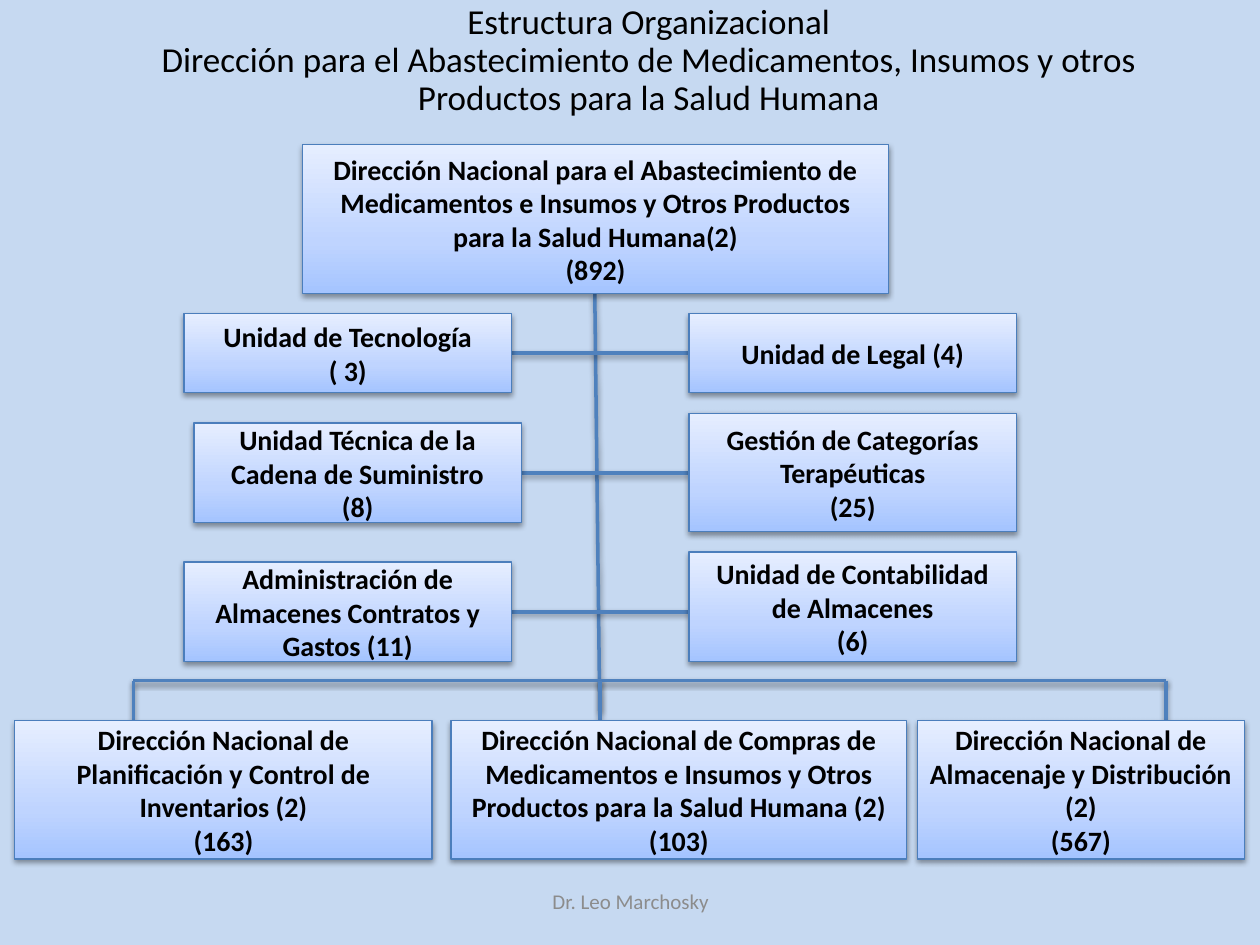
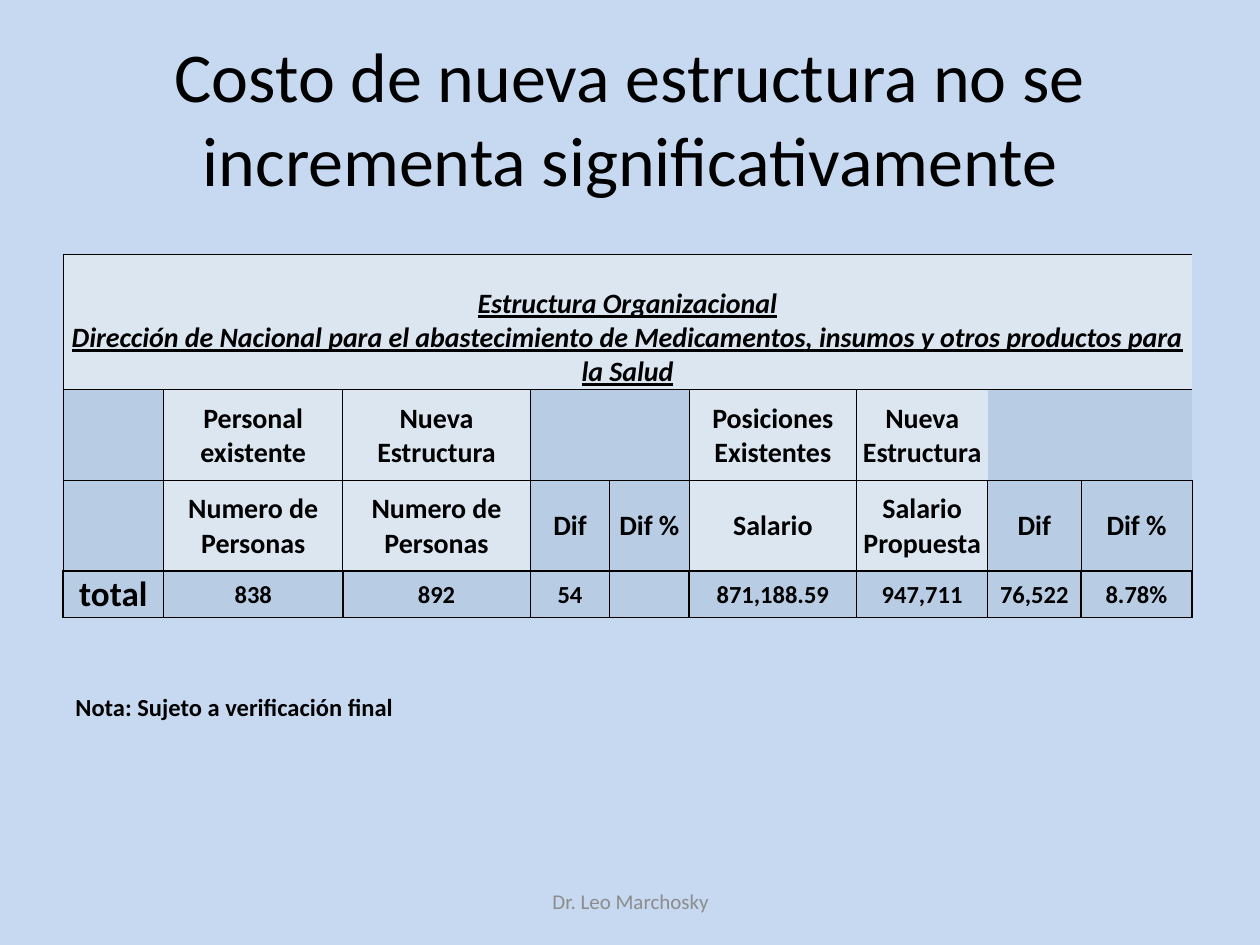
from pptx import Presentation
from pptx.dml.color import RGBColor
from pptx.enum.shapes import MSO_CONNECTOR, MSO_SHAPE
from pptx.enum.text import MSO_ANCHOR, MSO_AUTO_SIZE, PP_ALIGN
from pptx.oxml import parse_xml
from pptx.oxml.ns import nsdecls, qn
from pptx.util import Cm, Pt
from copy import deepcopy

CENTER, LEFT = PP_ALIGN.CENTER, PP_ALIGN.LEFT
MIDDLE, BOTTOM = MSO_ANCHOR.MIDDLE, MSO_ANCHOR.BOTTOM
RECTANGLE, STRAIGHT = MSO_SHAPE.RECTANGLE, MSO_CONNECTOR.STRAIGHT
NO_FIT = MSO_AUTO_SIZE.NONE
TITLE_ONLY = 5

# Shared style
FONT = "Calibri"
BLACK, FOOTER_GREY, BACKGROUND = "000000", "8C8C8C", "C6D9F1"
BOX_LINE, LINK = "4B7EBC", "4F81BD"
BOX_GRADIENT = [(0, "A4C4FF"), (0.35, "BFD4FF"), (1, "E6EEFF")]
CELL_LIGHT, CELL_BLUE = "DCE6F1", "B8CCE4"
FOOTER = "Dr. Leo Marchosky"

# Organization chart: left, top, width, height in cm, then text
UNIT_WIDTH, LEFT_X, RIGHT_X = 6.6, 3.71, 13.89
HEAD = (6.1, 2.92, 11.81, 3,
        "Dirección Nacional para el Abastecimiento de Medicamentos e Insumos "
        "y Otros Productos para la Salud Humana(2)\n(892)")
LEFT_UNITS = [
    (LEFT_X, 6.32, UNIT_WIDTH, 1.6, "Unidad de Tecnología\n( 3)"),
    (3.91, 8.53, UNIT_WIDTH, 2.01,
     "Unidad Técnica de la Cadena de Suministro\n(8)"),
    (LEFT_X, 11.33, UNIT_WIDTH, 2.01,
     "Administración de Almacenes Contratos y Gastos (11)"),
]
RIGHT_UNITS = [
    (RIGHT_X, 6.32, UNIT_WIDTH, 1.6, "Unidad de Legal (4)"),
    (RIGHT_X, 8.33, UNIT_WIDTH, 2.39,
     "Gestión de Categorías Terapéuticas\n(25)"),
    (RIGHT_X, 11.13, UNIT_WIDTH, 2.21,
     "Unidad de Contabilidad de Almacenes\n(6)"),
]
DIVISION_TOP, DIVISION_HEIGHT, CROSSBAR_Y = 14.53, 2.79, 13.72
DROP_XS = [2.69, 12.09, 23.5]
DIVISIONS = [
    (0.3, 8.41, "Dirección Nacional de Planificación y Control de "
                "Inventarios (2)\n(163)"),
    (9.09, 9.19, "Dirección Nacional de Compras de Medicamentos e Insumos y "
                 "Otros Productos para la Salud Humana (2)\n(103)"),
    (18.49, 6.6, "Dirección Nacional de Almacenaje y Distribución (2)\n(567)"),
]

# Cost table
COLUMN_WIDTHS = [0.91, 0.76, 0.36, 3.61, 3.78, 1.6, 1.6, 3.38, 2.64, 1.88, 2.24]
ROW_HEIGHTS = [2.72, 1.83, 1.83, 0.94]
HEADING = ("Estructura Organizacional\nDirección de Nacional para el "
           "abastecimiento de Medicamentos, insumos y otros productos para la Salud")
COST_ROWS = [
    [HEADING] + [""] * 10,
    ["", "", "", "Personal existente", "Nueva Estructura", "", "",
     "Posiciones Existentes", "Nueva Estructura", "", ""],
    ["", "", "", "Numero de Personas", "Numero de Personas", "Dif", "Dif %",
     "Salario", "Salario Propuesta", "Dif", "Dif %"],
    ["total", "", "", "838", "892", "54", "", "871,188.59", "947,711",
     "76,522", "8.78%"],
]
MERGES = [(0, 0, 10), (3, 0, 2)]
LIGHT_COLUMNS = (3, 4, 7, 8)
# Columns of each row that have no line on their right edge
OPEN_RIGHT = [range(11), (0, 1, 5, 8, 9, 10), (0, 1), ()]


def color(value):
    return RGBColor.from_string(value)


def style_text(frame, size, bold=False, ink=BLACK, align=CENTER, emphasis=False):
    for para in frame.paragraphs:
        para.alignment = align
        for span in para.runs:
            font = span.font
            font.name, font.size, font.bold = FONT, Pt(size), bold
            font.italic = font.underline = emphasis
            font.color.rgb = color(ink)


def place(shape, left, top, width, height):
    shape.left, shape.top = Cm(left), Cm(top)
    shape.width, shape.height = Cm(width), Cm(height)


def add_shadow(shape):
    """Append a soft downward shadow after the fill and line."""
    shape._element.spPr.append(parse_xml(
        f'<a:effectLst {nsdecls("a")}><a:outerShdw blurRad="40000" dist="20000" '
        'dir="5400000" rotWithShape="0"><a:srgbClr val="000000">'
        '<a:alpha val="38000"/></a:srgbClr></a:outerShdw></a:effectLst>'))


def add_title(page, text, area, size, spacing=1.0):
    title = page.shapes.title
    place(title, *area)
    frame = title.text_frame
    frame.text = text
    frame.auto_size, frame.vertical_anchor = NO_FIT, MIDDLE
    style_text(frame, size)
    for para in frame.paragraphs:
        para.line_spacing = spacing


def add_label(page, text, area, size, wrap=True, **style):
    box = page.shapes.add_textbox(*map(Cm, area))
    frame = box.text_frame
    frame.text, frame.word_wrap = text, wrap
    frame.vertical_anchor = MIDDLE
    style_text(frame, size, **style)


def add_footer(page):
    add_label(page, FOOTER, (8.69, 17.65, 8.05, 1.02), 12, ink=FOOTER_GREY)


def add_unit(page, left, top, width, height, text):
    box = page.shapes.add_shape(RECTANGLE, *map(Cm, (left, top, width, height)))
    box.fill.gradient()
    box.fill.gradient_angle = 90
    stops = box._element.spPr.find(".//" + qn("a:gsLst"))
    stops.insert(1, deepcopy(stops[0]))
    for stop, (position, shade) in zip(box.fill.gradient_stops, BOX_GRADIENT):
        stop.position = position
        stop.color.rgb = color(shade)
    box.line.color.rgb = color(BOX_LINE)
    box.line.width = Pt(0.75)
    add_shadow(box)
    frame = box.text_frame
    frame.text, frame.word_wrap = text, True
    frame.vertical_anchor = MIDDLE
    style_text(frame, 16, bold=True)


def add_link(page, *ends):
    link = page.shapes.add_connector(STRAIGHT, *map(Cm, ends))
    link.line.color.rgb = color(LINK)
    link.line.width = Pt(2)
    add_shadow(link)


def set_borders(cell, sides, width):
    properties = cell._tc.get_or_add_tcPr()
    for side in "LRTB":
        paint = (f'<a:solidFill><a:srgbClr val="{BLACK}"/></a:solidFill>'
                 if side in sides else "<a:noFill/>")
        properties.append(parse_xml(
            f'<a:ln{side} {nsdecls("a")} w="{Pt(width)}">{paint}</a:ln{side}>'))


def border_sides(row, column):
    left = "" if column - 1 in OPEN_RIGHT[row] else "L"
    right = "" if column in OPEN_RIGHT[row] else "R"
    return left + right + "TB"


def add_cost_table(page):
    frame = page.shapes.add_table(
        len(ROW_HEIGHTS), len(COLUMN_WIDTHS), Cm(1.27), Cm(5.13),
        Cm(sum(COLUMN_WIDTHS)), Cm(sum(ROW_HEIGHTS)))
    table = frame.table
    table.first_row = table.horz_banding = False
    for column, width in zip(table.columns, COLUMN_WIDTHS):
        column.width = Cm(width)
    for row, height in zip(table.rows, ROW_HEIGHTS):
        row.height = Cm(height)
    for r, texts in enumerate(COST_ROWS):
        for c, text in enumerate(texts):
            cell = table.cell(r, c)
            set_borders(cell, border_sides(r, c), 1 if r == 3 else 0.5)
            light = r == 0 or (r < 3 and c in LIGHT_COLUMNS)
            cell.fill.solid()
            cell.fill.fore_color.rgb = color(CELL_LIGHT if light else CELL_BLUE)
            cell.margin_left = cell.margin_right = cell.margin_top = Cm(0.03)
            cell.margin_bottom = 0
            cell.vertical_anchor = BOTTOM if r == 0 else MIDDLE
            cell.text_frame.text = text
            size = 16 if r < 3 else 20 if c == 0 else 14
            style_text(cell.text_frame, size, bold=True, emphasis=r == 0)
    for row, first, last in MERGES:
        table.cell(row, first).merge(table.cell(row, last))


def build_organization(page):
    add_title(page, "Estructura Organizacional\nDirección para el Abastecimiento "
              "de Medicamentos, Insumos y otros Productos para la Salud Humana",
              (2.13, -0.05, 21.9, 2.57), 20, spacing=0.9)
    # Links: trunk, crossbar, drops, then one rung per pair of units
    add_link(page, 11.99, 5.92, DROP_XS[1], 14.33)
    add_link(page, DROP_XS[0], CROSSBAR_Y, DROP_XS[-1], CROSSBAR_Y)
    for x in DROP_XS:
        add_link(page, x, CROSSBAR_Y, x, DIVISION_TOP)
    for left, top, width, height, _ in LEFT_UNITS:
        middle = top + height / 2
        add_link(page, left + width, middle, RIGHT_X, middle)
    # Boxes
    for unit in [HEAD] + LEFT_UNITS + RIGHT_UNITS:
        add_unit(page, *unit)
    for left, width, text in DIVISIONS:
        add_unit(page, left, DIVISION_TOP, width, DIVISION_HEIGHT, text)
    add_footer(page)


def build_cost(page):
    add_title(page, "Costo de nueva estructura no se incrementa significativamente",
              (1.27, 0.76, 22.86, 3.18), 40)
    add_cost_table(page)
    add_footer(page)
    add_label(page, "Nota: Sujeto a verificación final", (1.27, 13.82, 6.96, 0.86),
              14, wrap=False, bold=True, align=LEFT)


def main():
    deck = Presentation()
    deck.slide_width, deck.slide_height = Cm(25.4), Cm(19.05)
    background = deck.slide_master.background.fill
    background.solid()
    background.fore_color.rgb = color(BACKGROUND)
    for build in (build_organization, build_cost):
        build(deck.slides.add_slide(deck.slide_layouts[TITLE_ONLY]))
    deck.save("out.pptx")


if __name__ == "__main__":
    main()
